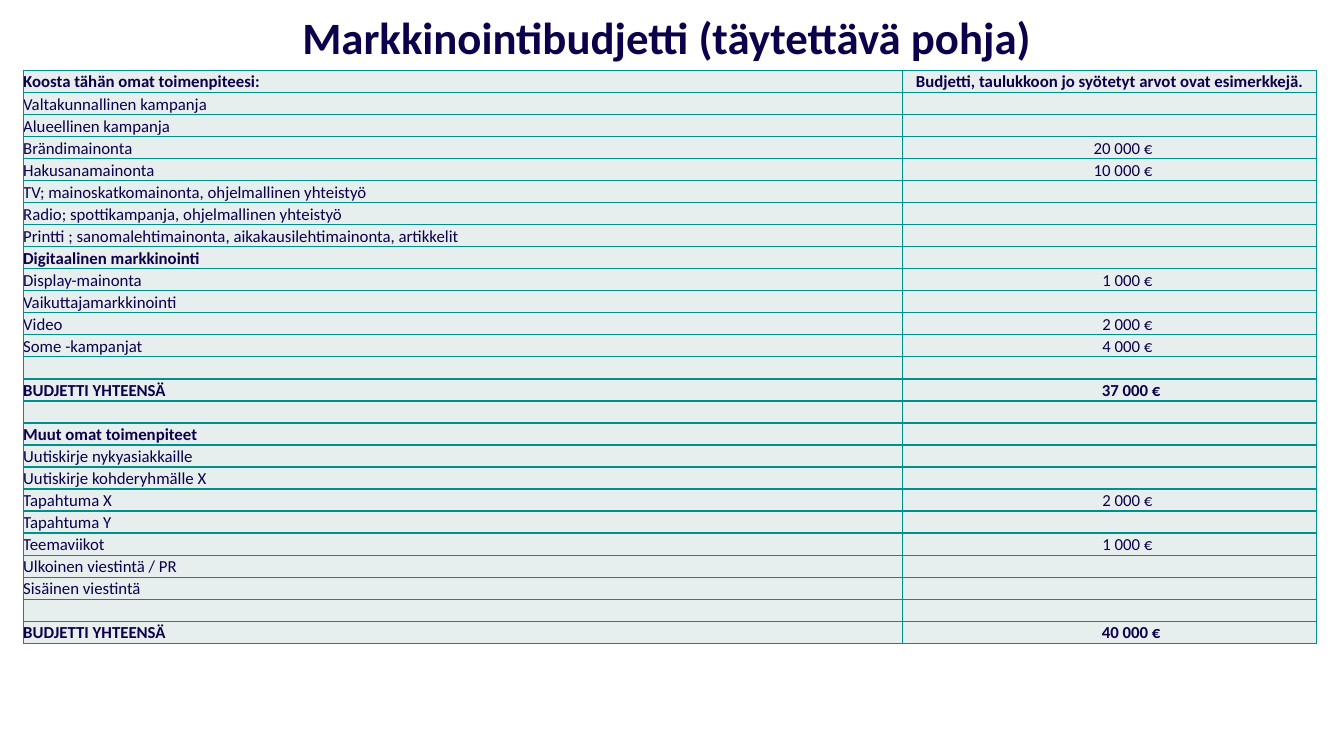
from dataclasses import dataclass
from lxml.etree import SubElement
from pptx import Presentation
from pptx.dml.color import RGBColor as RGB
from pptx.enum.text import MSO_ANCHOR as ANCHOR, PP_ALIGN as ALIGN
from pptx.oxml.ns import qn
from pptx.util import Inches, Pt


@dataclass(frozen=True)
class Theme:
    font: str = "Calibri"
    ink: str = "0D004B"
    fill: str = "E7EEEE"
    line: str = "008F8B"
    title: int = 32
    body: int = 12
    border: int = 1


T = Theme()


def add_run(p, text, size, bold):
    r = p.add_run()
    r.text = text
    r.font.name = T.font
    r.font.size = Pt(size)
    r.font.bold = bold
    r.font.color.rgb = RGB.from_string(T.ink)


def style_cell(cell):
    cell.margin_left = cell.margin_right = cell.margin_top = cell.margin_bottom = 0
    cell.vertical_anchor = ANCHOR.BOTTOM
    tcPr = cell._tc.get_or_add_tcPr()
    for side in ("a:lnL", "a:lnR", "a:lnT", "a:lnB"):
        ln = SubElement(tcPr, qn(side), w=str(Pt(T.border)))
        SubElement(SubElement(ln, qn("a:solidFill")), qn("a:srgbClr"), val=T.line)
    cell.fill.solid()
    cell.fill.fore_color.rgb = RGB.from_string(T.fill)


HEADINGS = {"Koosta tähän omat toimenpiteesi:", "Digitaalinen markkinointi",
            "BUDJETTI YHTEENSÄ", "Muut omat toimenpiteet"}
BUDGET = [
    ("Koosta tähän omat toimenpiteesi:",
     "Budjetti, taulukkoon jo syötetyt arvot ovat esimerkkejä."),
    ("Valtakunnallinen kampanja", ""),
    ("Alueellinen kampanja", ""),
    ("Brändimainonta", "20 000 €"),
    ("Hakusanamainonta", "10 000 €"),
    ("TV; mainoskatkomainonta, ohjelmallinen yhteistyö", ""),
    ("Radio; spottikampanja, ohjelmallinen yhteistyö", ""),
    ("Printti ; sanomalehtimainonta, aikakausilehtimainonta, artikkelit", ""),
    ("Digitaalinen markkinointi", ""),
    ("Display-mainonta", "1 000 €"),
    ("Vaikuttajamarkkinointi", ""),
    ("Video", "2 000 €"),
    ("Some -kampanjat", "4 000 €"),
    ("", ""),
    ("BUDJETTI YHTEENSÄ", "37 000 €"),
    ("", ""),
    ("Muut omat toimenpiteet", ""),
    ("Uutiskirje nykyasiakkaille", ""),
    ("Uutiskirje kohderyhmälle X", ""),
    ("Tapahtuma X", "2 000 €"),
    ("Tapahtuma Y", ""),
    ("Teemaviikot", "1 000 €"),
    ("Ulkoinen viestintä / PR", ""),
    ("Sisäinen viestintä", ""),
    ("", ""),
    ("BUDJETTI YHTEENSÄ", "40 000 €"),
]

prs = Presentation()
prs.slide_width, prs.slide_height = Inches(13.33), Inches(7.5)
W, H = prs.slide_width, prs.slide_height
s = prs.slides.add_slide(prs.slide_layouts[5])

title = s.shapes.title
title.left, title.top = int(W * 0.04), Inches(0.1)
title.width, title.height = int(W * 0.92), int(H * 0.08)
tf = title.text_frame
tf.word_wrap = True
tf.vertical_anchor = ANCHOR.MIDDLE
p = tf.paragraphs[0]
p.alignment = ALIGN.CENTER
p.line_spacing = 0.9
add_run(p, "Markkinointibudjetti (täytettävä pohja) ", T.title, True)

table_w, table_h = Inches(12.83), Inches(5.69)
table = s.shapes.add_table(len(BUDGET), 2, Inches(0.23), Inches(0.7), table_w, table_h).table
table.first_row = table.horz_banding = False
for col, share in zip(table.columns, (0.68, 0.32)):
    col.width = int(table_w * share)

for i, row in enumerate(BUDGET):
    table.rows[i].height = table_h // len(BUDGET)
    bold = row[0] in HEADINGS
    for j, text in enumerate(row):
        cell = table.cell(i, j)
        style_cell(cell)
        p = cell.text_frame.paragraphs[0]
        if text:
            add_run(p, text, T.body, bold)
        else:
            SubElement(p._p, qn("a:endParaRPr"), sz=str(T.body * 100))
        if i == 0:
            cell.vertical_anchor = ANCHOR.MIDDLE
            p.alignment = ALIGN.CENTER if j else ALIGN.LEFT
        elif j and text:
            p.alignment = ALIGN.RIGHT
            cell.margin_right = Inches(1.55 if bold else 1.63)

prs.save("out.pptx")
